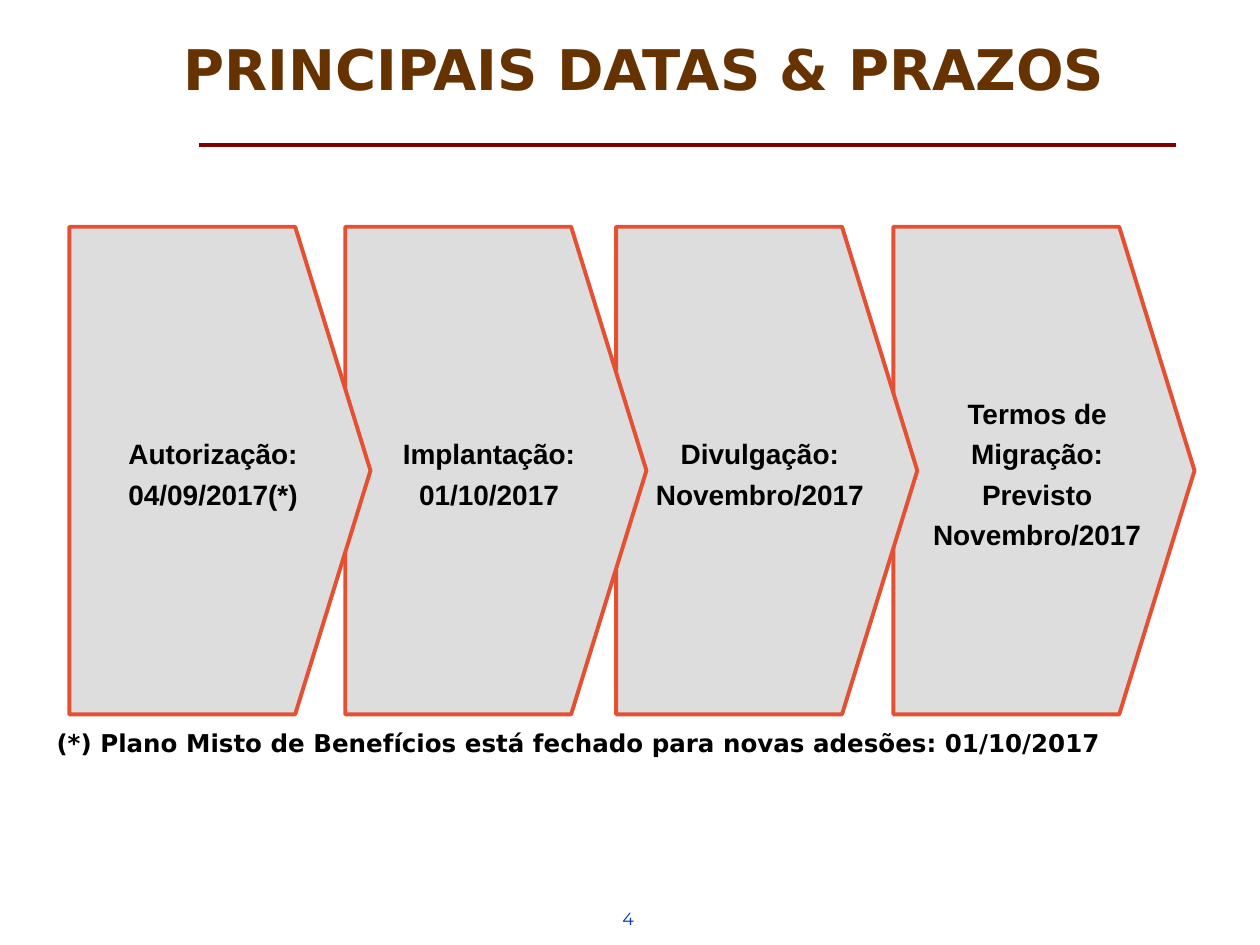
import pptx
import pptx.dml.color
import pptx.enum.shapes
import pptx.enum.text
import pptx.oxml.ns
import pptx.util
from lxml import etree
from pptx.util import Inches

RGBColor = pptx.dml.color.RGBColor
BROWN = RGBColor(0x66, 0x33, 0x00)
MAROON = RGBColor(0x80, 0x00, 0x00)
ORANGE = RGBColor(0xE6, 0x50, 0x32)
GREY = RGBColor(0xDD, 0xDD, 0xDD)
BLACK = RGBColor(0x00, 0x00, 0x00)
BLUE = RGBColor(0x00, 0x33, 0xCC)

CENTER = pptx.enum.text.PP_ALIGN.CENTER
LEFT = pptx.enum.text.PP_ALIGN.LEFT
MIDDLE = pptx.enum.text.MSO_ANCHOR.MIDDLE
BOTTOM = pptx.enum.text.MSO_ANCHOR.BOTTOM
TOP = pptx.enum.text.MSO_ANCHOR.TOP


class SlideBuilder:
    heading_font = "DejaVu Sans"
    step_font = "Arial"
    number_font = "Montserrat"
    step_indent = Inches(0.19)

    def __init__(self, slide):
        self.slide = slide

    def fill_text(self, shape, lines, font, size, color, bold=True,
                  align=LEFT, anchor=TOP, spacing=1.0):
        frame = shape.text_frame
        frame.word_wrap = True
        frame.vertical_anchor = anchor
        frame.text = "\n".join(lines)
        for paragraph in frame.paragraphs:
            paragraph.alignment = align
            paragraph.line_spacing = spacing
            for run in paragraph.runs:
                run.font.name = font
                run.font.size = pptx.util.Pt(size)
                run.font.bold = bold
                run.font.color.rgb = color
        return frame

    def text(self, left, top, width, height, content, font, size, color, **style):
        box = self.slide.shapes.add_textbox(
            Inches(left), Inches(top), Inches(width), Inches(height))
        return self.fill_text(box, [content], font, size, color, **style)

    def rule(self, left, right, top):
        line = self.slide.shapes.add_connector(
            pptx.enum.shapes.MSO_CONNECTOR.STRAIGHT,
            Inches(left), Inches(top), Inches(right), Inches(top))
        line.line.color.rgb = MAROON
        line.line.width = pptx.util.Pt(2)
        etree.SubElement(line._element.spPr, pptx.oxml.ns.qn("a:effectLst"))

    def step(self, left, lines):
        shape = self.slide.shapes.add_shape(
            pptx.enum.shapes.MSO_SHAPE.PENTAGON,
            Inches(left), Inches(1.8), Inches(2.39), Inches(3.87))
        shape.adjustments[0] = 0.25
        shape.shadow.inherit = False
        shape.fill.solid()
        shape.fill.fore_color.rgb = GREY
        shape.line.color.rgb = ORANGE
        shape.line.width = pptx.util.Pt(2.25)
        frame = self.fill_text(shape, lines, self.step_font, 16, BLACK,
                               align=CENTER, anchor=MIDDLE, spacing=1.2)
        for paragraph in frame.paragraphs:
            properties = paragraph._p.get_or_add_pPr()
            properties.set("marL", str(self.step_indent))
            properties.set("indent", "0")


def main():
    presentation = pptx.Presentation()
    presentation.slide_width = Inches(10)
    presentation.slide_height = Inches(7.5)
    builder = SlideBuilder(presentation.slides.add_slide(presentation.slide_layouts[6]))

    # Rule under the title and page number
    builder.rule(1.58, 9.33, 1.15)
    builder.text(4.84, 7.16, 0.71, 0.34, "4", builder.number_font, 10, BLUE, bold=False)

    # Timeline steps, last one first so that each tip overlaps the next step
    steps = [
        (0.55, ["Autorização: 04/09/2017(*)"]),
        (2.74, ["Implantação: 01/10/2017"]),
        (4.89, ["Divulgação: Novembro/2017"]),
        (7.09, ["Termos de Migração:", "Previsto Novembro/2017"]),
    ]
    for left, lines in reversed(steps):
        builder.step(left, lines)

    # Title
    title = builder.text(0.43, 0.05, 9.37, 0.75, "PRINCIPAIS DATAS & PRAZOS",
                         builder.heading_font, 32, BROWN,
                         align=CENTER, anchor=BOTTOM, spacing=0.8)
    title.margin_left = title.margin_right = 0
    title.margin_top = title.margin_bottom = 0

    # Footnote
    builder.text(0.35, 5.68, 9.65, 0.38,
                 "(*) Plano Misto de Benefícios está fechado para novas adesões: 01/10/2017",
                 builder.heading_font, 14, BLACK, spacing=1.2)

    presentation.save("out.pptx")


if __name__ == "__main__":
    main()
